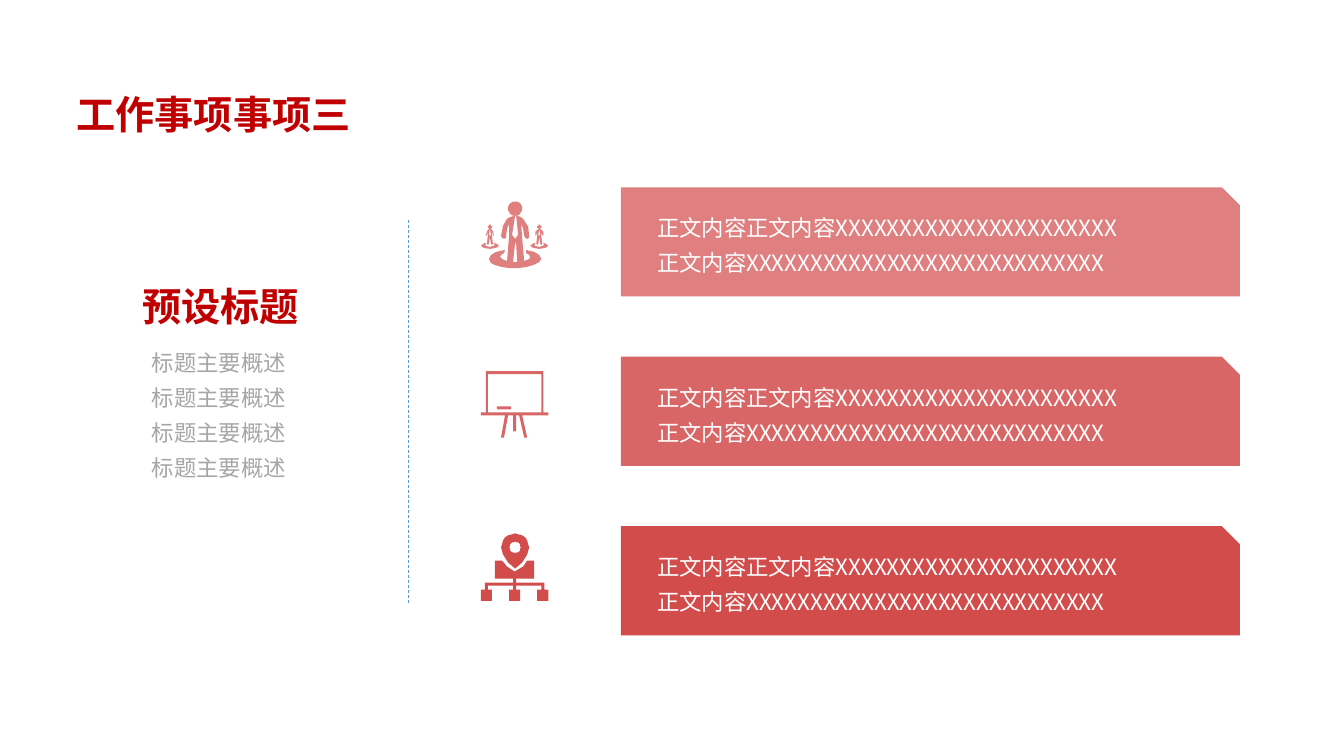
import math
from dataclasses import dataclass

import lxml.etree
import pptx
import pptx.dml.color
import pptx.enum.dml
import pptx.enum.shapes
import pptx.enum.text
import pptx.oxml
import pptx.oxml.ns
import pptx.util
from pptx.util import Cm


@dataclass(frozen=True)
class Theme:
    font: str = "Noto Sans CJK SC"
    red: str = "C00000"
    gray: str = "A6A6A6"
    white: str = "FFFFFF"
    blue: str = "5B9BD5"
    title_size: int = 28
    body_size: int = 16
    line_spacing: float = 1.3


theme = Theme()
qn = pptx.oxml.ns.qn
rgb = pptx.dml.color.RGBColor.from_string


def add_text(left, top, width, height, lines, size, color, bold=False):
    box = slide.shapes.add_textbox(Cm(left), Cm(top), Cm(width), Cm(height))
    frame = box.text_frame
    frame.word_wrap = True
    frame.auto_size = pptx.enum.text.MSO_AUTO_SIZE.SHAPE_TO_FIT_TEXT
    for index, line in enumerate(lines):
        paragraph = frame.add_paragraph() if index else frame.paragraphs[0]
        paragraph.line_spacing = theme.line_spacing
        run = paragraph.add_run()
        run.text = line
        run.font.name = theme.font
        run.font.size = pptx.util.Pt(size)
        run.font.bold = bold
        run.font.color.rgb = rgb(color)
        east_asian = lxml.etree.SubElement(run.font._element, qn("a:ea"))
        east_asian.set("typeface", theme.font)


def oval(center_x, center_y, radius):
    angles = [math.radians(degree) for degree in range(0, 360, 15)]
    return [(center_x + radius * math.cos(angle), center_y + radius * math.sin(angle))
            for angle in angles]


presentation = pptx.Presentation()
presentation.slide_width = Cm(33.87)
presentation.slide_height = Cm(19.05)
slide = presentation.slides.add_slide(presentation.slide_layouts[6])

# Heading and summary on the left
add_text(1.68, 1.8, 8.61, 1.65, ["工作事项事项三"], theme.title_size, theme.red, True)
add_text(3.33, 6.63, 6.65, 1.65, ["预设标题"], theme.title_size, theme.red, True)
add_text(3.58, 8.48, 8.56, 4.62, ["标题主要概述"] * 4, theme.body_size, theme.gray)

# Dashed divider
divider = slide.shapes.add_connector(
    pptx.enum.shapes.MSO_CONNECTOR.STRAIGHT, Cm(10.29), Cm(5.54), Cm(10.29), Cm(15.19))
divider.line.color.rgb = rgb(theme.blue)
divider.line.width = pptx.util.Pt(0.5)
divider.line.dash_style = pptx.enum.dml.MSO_LINE.DASH
lxml.etree.SubElement(divider._element.spPr, qn("a:effectLst"))

# Icon outlines on a grid 67 units wide
ICON_GRID = 67
leader = [
    oval(34, 7, 7),
    [(60, 57), (58, 53), (53, 50), (45, 48), (45, 51), (48, 53), (49, 55), (48, 57),
     (43, 59), (41, 36), (40, 22), (42, 27), (43, 34), (44, 36), (46, 37), (48, 36),
     (48, 34), (47, 25), (42, 17), (39, 15), (35, 14), (37, 33), (34, 37), (31, 33),
     (34, 14), (30, 15), (26, 17), (22, 24), (20, 34), (21, 36), (23, 37), (25, 36),
     (25, 34), (26, 27), (28, 22), (28, 34), (26, 59), (21, 57), (19, 55), (20, 53),
     (23, 51), (24, 48), (15, 50), (10, 53), (8, 57), (10, 61), (14, 63), (21, 65),
     (28, 66), (37, 66), (45, 65), (52, 63), (58, 60)],
    [(32, 60), (34, 41), (35, 41), (36, 60)],
]
helper = [
    oval(9, 25, 2),
    [(11, 28), (10, 27), (9, 27), (10, 33), (9, 34), (8, 33), (9, 27), (7, 28),
     (5.5, 30), (5, 33), (5.5, 34), (6, 33), (7, 30), (7, 33), (6, 42), (7, 43),
     (8, 42), (9, 35), (10, 42), (11, 43), (12, 42), (11, 34), (11, 30), (12, 33),
     (12.5, 34), (13, 33), (12.5, 30)],
    [(13, 41), (16, 42), (18, 44), (15, 46), (9, 47), (3, 46), (0, 44), (2, 42),
     (5, 41), (5, 42), (4, 43), (5, 44), (9, 45), (12, 44), (14, 43), (13, 42)],
]
team_icon = leader + [[(x + shift, y) for x, y in outline]
                      for shift in (0, 49) for outline in helper]
board_icon = [
    [(16, 35), (30, 35), (30, 38), (16, 38)],
    [(7, 3), (7, 41), (60, 41), (60, 3)],
    [(5, 0), (62, 0), (62, 41), (67, 41), (67, 44), (41, 44), (46, 66), (43, 66),
     (38, 44), (35, 44), (35, 60), (32, 60), (32, 44), (27, 44), (23, 66), (20, 66),
     (24, 44), (0, 44), (0, 41), (5, 41)],
]
location_icon = [
    [(14, 27), (21, 27), (26, 33), (32, 37), (34, 38), (35, 37), (42, 33), (46, 27),
     (53, 27), (53, 45), (35, 45), (35, 49), (63, 49), (63, 56), (67, 56), (67, 67),
     (56, 67), (56, 56), (60, 56), (60, 52), (35, 52), (35, 56), (39, 56), (39, 67),
     (28, 67), (28, 56), (32, 56), (32, 52), (7, 52), (7, 56), (11, 56), (11, 67),
     (0, 67), (0, 56), (4, 56), (4, 49), (32, 49), (32, 45), (14, 45)],
    oval(34, 14, 5.5),
    [point for point in oval(34, 14, 13.5) if point[1] <= 14.1 and point[0] < 34]
    + [point for point in oval(34, 14, 13.5) if point[1] <= 14.1 and point[0] >= 34]
    + [(46, 21), (41, 29), (34, 35), (27, 29), (22, 21)],
]
# The pin head runs from its left end over the top to its right end
location_icon[2] = sorted(location_icon[2][:-5]) + location_icon[2][-5:]

# Three rows: icon, snipped card and text
ROW_TOP, ROW_PITCH = 4.72, 4.27
body_lines = ["正文内容正文内容" + "X" * 22, "正文内容" + "X" * 28]
rows = [(team_icon, 5.08, 50), (board_icon, 9.35, 60), (location_icon, 13.44, 70)]
for index, (outlines, icon_top, opacity) in enumerate(rows):
    top = ROW_TOP + index * ROW_PITCH
    card = slide.shapes.add_shape(
        pptx.enum.shapes.MSO_SHAPE.SNIP_1_RECTANGLE,
        Cm(15.65), Cm(top), Cm(15.6), Cm(2.75))

    builder = slide.shapes.build_freeform(*outlines[0][0], scale=Cm(1.7) / ICON_GRID)
    for number, outline in enumerate(outlines):
        if number:
            builder.move_to(*outline[0])
        builder.add_line_segments(outline[1:], close=True)
    icon = builder.convert_to_shape(Cm(12.12), Cm(icon_top))

    for shape in (card, icon):
        shape.shadow.inherit = False
        shape.line.fill.background()
        shape.fill.solid()
        shape.fill.fore_color.rgb = rgb(theme.red)
        color = shape._element.spPr.find(qn("a:solidFill")).find(qn("a:srgbClr"))
        lxml.etree.SubElement(color, qn("a:alpha")).set("val", str(opacity * 1000))

    add_text(16.31, top + 0.36, 14.94, 1.96, body_lines, theme.body_size, theme.white)

presentation.save("out.pptx")
